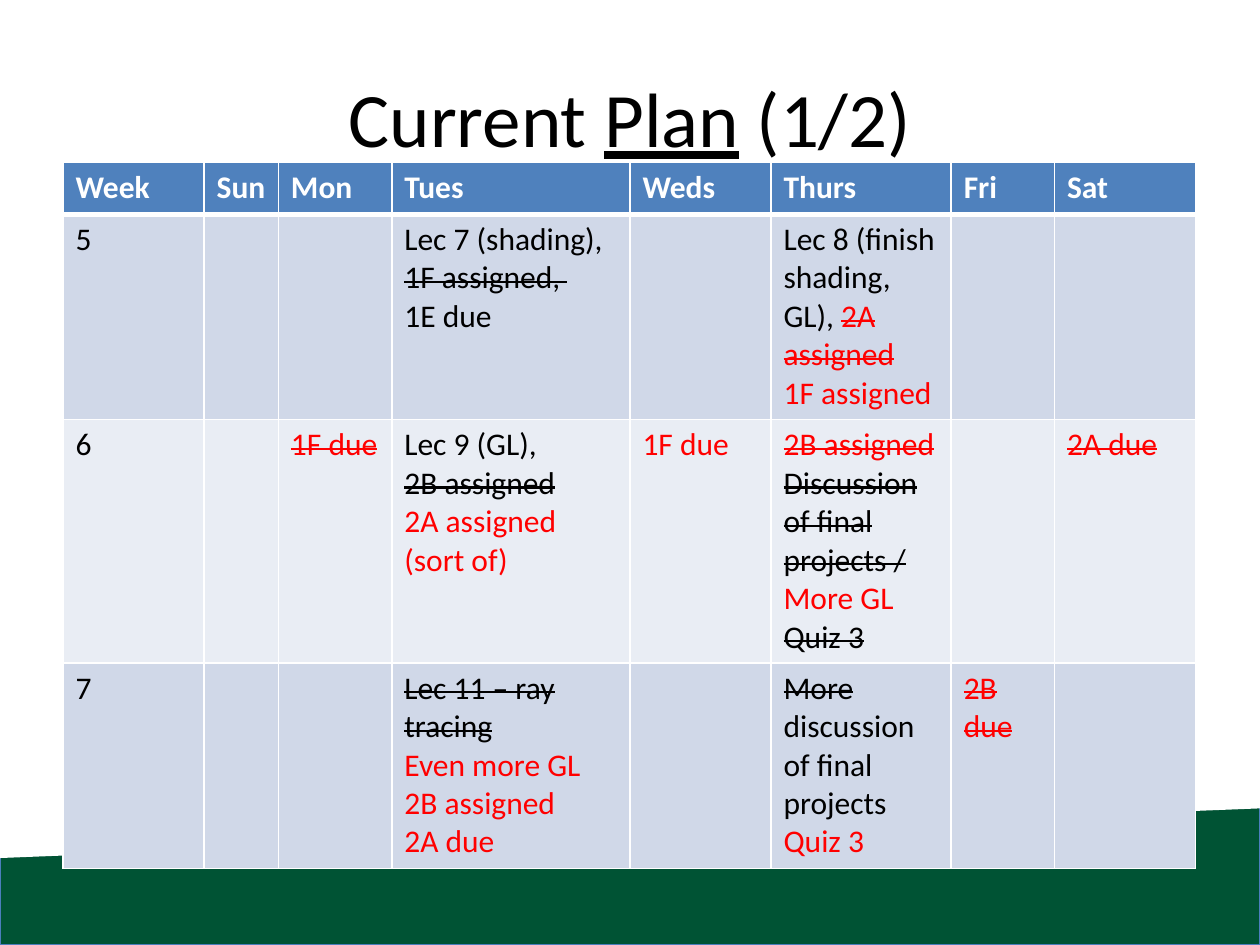
from typing import NamedTuple

from lxml import etree
from pptx import Presentation
from pptx import util as u
from pptx.dml.color import RGBColor
from pptx.enum import shapes, text
from pptx.oxml import ns

BLACK, WHITE, RED = "000000", "FFFFFF", "FF0000"
GREEN, BLUE, LINE_BLUE = "005334", "4F81BD", "4B7EBC"
BANDS = ["D0D8E8", "E9EDF4"]


class Run(NamedTuple):
    text: str
    color: str = BLACK
    strike: bool = False
    bold: bool = False
    underline: bool = False


def red(txt):
    return Run(txt, RED)


def struck(txt, color=BLACK):
    return Run(txt, color, strike=True)


def rgb(color):
    return RGBColor.from_string(color)


class SlideBuilder:
    font = "Calibri"

    def __init__(self, prs):
        self.s = prs.slides.add_slide(prs.slide_layouts[5])

    def add_runs(self, p, runs, size):
        p.font.name, p.font.size = self.font, u.Pt(size)
        for run in runs:
            r = p.add_run()
            r.text = run.text
            r.font.color.rgb = rgb(run.color)
            r.font.bold = run.bold
            r.font.underline = run.underline
            if run.strike:
                r.font._element.set("strike", "sngStrike")

    def shape(self, kind, box, fill, line=None):
        sp = self.s.shapes.add_shape(kind, *map(u.Inches, box))
        sp.shadow.inherit = False
        sp.fill.solid()
        sp.fill.fore_color.rgb = rgb(fill)
        if line:
            sp.line.color.rgb = rgb(line)
            sp.line.width = u.Pt(0.75)
        else:
            sp.line.fill.background()
        return sp

    def title(self, box, runs):
        """Format the title and bring it in front of the backdrop."""
        sp = self.s.shapes.title
        sp.left, sp.top, sp.width, sp.height = map(u.Inches, box)
        tf = sp.text_frame
        tf.vertical_anchor = text.MSO_ANCHOR.MIDDLE
        p = tf.paragraphs[0]
        p.alignment = text.PP_ALIGN.CENTER
        self.add_runs(p, runs, 44)
        self.s.shapes._spTree.append(sp._element)

    def border(self, cell, side, width):
        tc_pr = cell._tc.get_or_add_tcPr()
        ln = etree.SubElement(tc_pr, ns.qn(f"a:ln{side}"), w=str(u.Pt(width)))
        fill = etree.SubElement(ln, ns.qn("a:solidFill"))
        etree.SubElement(fill, ns.qn("a:srgbClr"), val=WHITE)

    def cell(self, cell, paragraphs, fill, bottom=1):
        for side, width in zip("LRTB", (1, 1, 1, bottom)):
            self.border(cell, side, width)
        cell.fill.solid()
        cell.fill.fore_color.rgb = rgb(fill)
        tf = cell.text_frame
        for i, runs in enumerate(paragraphs):
            p = tf.add_paragraph() if i else tf.paragraphs[0]
            self.add_runs(p, runs, 18)

    def table(self, left, top, widths, heights, header, rows):
        """Rows map a column name to its paragraphs; other cells stay empty."""
        frame = self.s.shapes.add_table(
            len(heights), len(widths), u.Inches(left), u.Inches(top),
            u.Inches(sum(widths)), u.Inches(sum(heights)))
        table = frame.table
        for col, width in zip(table.columns, widths):
            col.width = u.Inches(width)
        for row, height in zip(table.rows, heights):
            row.height = u.Inches(height)
        for c, name in enumerate(header):
            self.cell(table.cell(0, c), [[Run(name, WHITE, bold=True)]], BLUE, bottom=3)
            for i, row in enumerate(rows):
                self.cell(table.cell(i + 1, c), row.get(name, []), BANDS[i % 2])


DAYS = ["Week", "Sun", "Mon", "Tues", "Weds", "Thurs", "Fri", "Sat"]
WEEKS = [
    {
        "Week": [[Run("5")]],
        "Tues": [[Run("Lec 7 (shading),")], [struck("1F assigned, ")], [Run("1E due")]],
        "Thurs": [[Run("Lec 8 (finish shading, GL), "), struck("2A assigned", RED)],
                  [red("1F assigned")]],
    },
    {
        "Week": [[Run("6")]],
        "Mon": [[struck("1F due", RED)]],
        "Tues": [[Run("Lec 9 (GL),")], [struck("2B assigned")],
                 [red("2A assigned (sort of)")]],
        "Weds": [[red("1F due")]],
        "Thurs": [[struck("2B assigned", RED)],
                  [struck("Discussion of final projects / "), red("More GL "),
                   struck("Quiz 3")]],
        "Sat": [[struck("2A due", RED)]],
    },
    {
        "Week": [[Run("7")]],
        "Tues": [[struck("Lec 11 – ray tracing")], [red("Even more GL")],
                 [red("2B assigned")], [red("2A due")]],
        "Thurs": [[struck("More "), Run("discussion of final projects")],
                  [red("Quiz 3")]],
        "Fri": [[struck("2B due", RED)]],
    },
]


def main():
    prs = Presentation()
    prs.slide_width, prs.slide_height = u.Inches(10), u.Inches(7.5)
    b = SlideBuilder(prs)

    b.shape(shapes.MSO_SHAPE.RECTANGLE, (0, 5.61, 10, 1.89), GREEN, LINE_BLUE)
    slant = b.shape(shapes.MSO_SHAPE.PARALLELOGRAM, (3.84, 0.65, 2.32, 10), WHITE)
    slant.adjustments[0] = 0.17
    slant.rotation = 90
    slant._element.spPr.xfrm.set("flipH", "1")

    b.title((0.5, 0.3, 9, 1.25),
            [Run("Current "), Run("Plan", underline=True), Run(" (1/2)")])
    b.table(0.5, 1.29, [1.12, 0.59, 0.9, 1.89, 1.12, 1.43, 0.82, 1.12],
            [0.41, 1.63, 1.93, 1.63], DAYS, WEEKS)
    prs.save("out.pptx")


if __name__ == "__main__":
    main()
